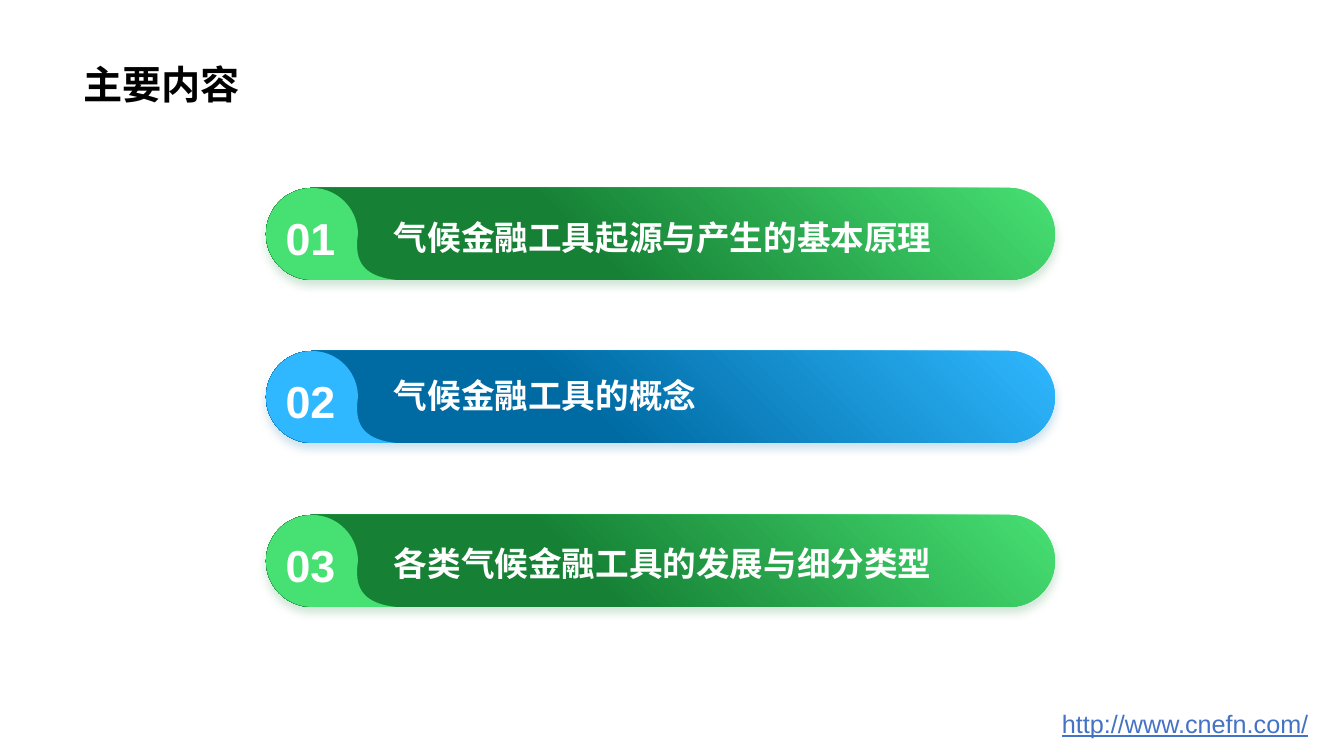
from math import cos, radians, sin

from lxml import etree
from pptx import Presentation
from pptx.dml.color import RGBColor
from pptx.enum.shapes import MSO_SHAPE as Shape
from pptx.enum.text import MSO_ANCHOR as Anchor, MSO_AUTO_SIZE as AutoSize, PP_ALIGN as Align
from pptx.oxml.ns import qn
from pptx.util import Emu, Pt

COLOURS = {
    "black": "000000", "white": "FFFFFF", "link": "4472C4",
    "light green": "47E073", "dark green": "168135",
    "light blue": "2FB7FF", "dark blue": "006BA3",
}


def px(length):
    return Emu(round(length * 914400 / 100.8))


def write(shape, text, size, colour, bold=True, align=Align.LEFT, wrap=True):
    frame = shape.text_frame
    frame.text = text
    frame.word_wrap = wrap
    frame.auto_size = AutoSize.NONE
    paragraph = frame.paragraphs[0]
    paragraph.alignment = align
    font = paragraph.runs[0].font
    font.name, font.size, font.bold = "Arial", Pt(size), bold
    font.color.rgb = RGBColor.from_string(COLOURS[colour])
    return paragraph


presentation = Presentation()
presentation.slide_width, presentation.slide_height = px(1344), px(756)
slide = presentation.slides.add_slide(presentation.slide_layouts[5])
shapes = slide.shapes

# Title
title = shapes.title
title.left, title.top, title.width, title.height = px(73), px(0), px(1198), px(113)
write(title, "主要内容", 28, "black").line_spacing = 0.9
title.text_frame.vertical_anchor = Anchor.BOTTOM

# Web address
address = shapes.add_textbox(px(1052), px(703), px(276), px(40))
write(address, "http://www.cnefn.com/", 18, "link", bold=False).runs[0].font.underline = True

# Tab outline around the centre of a bar's round end: three quarter circles, then a flared foot
RADIUS = 46
tab_outline = [(RADIUS * cos(radians(angle)), RADIUS * sin(radians(angle)))
               for angle in range(90, 361, 5)]
foot = [(46, 0), (43, 22), (46, 42), (84, 46)]
for step in range(1, 21):
    t = step / 20
    weights = [(1 - t) ** 3, 3 * t * (1 - t) ** 2, 3 * t * t * (1 - t), t ** 3]
    tab_outline.append(tuple(sum(weight * point[axis] for weight, point in zip(weights, foot))
                             for axis in (0, 1)))

# Agenda bars: heading, hue, offset of the heading inside the bar
agenda = [
    ("气候金融工具起源与产生的基本原理", "green", 24),
    ("气候金融工具的概念", "blue", 19),
    ("各类气候金融工具的发展与细分类型", "green", 23),
]
BAR_LEFT, BAR_TOP, BAR_WIDTH = 266, 188, 789
for row, (heading, hue, heading_offset) in enumerate(agenda):
    top = BAR_TOP + row * 327 // 2
    light, dark = COLOURS[f"light {hue}"], COLOURS[f"dark {hue}"]

    # Gradient bar
    bar = shapes.add_shape(Shape.ROUNDED_RECTANGLE, px(BAR_LEFT), px(top),
                           px(BAR_WIDTH), px(2 * RADIUS))
    bar.adjustments[0] = 0.5
    bar.line.fill.background()
    bar.fill.gradient()
    bar.fill.gradient_angle = 225
    for stop, position, colour in zip(bar.fill.gradient_stops, (0, 0.6), (light, dark)):
        stop.position = position
        stop.color.rgb = RGBColor.from_string(colour)

    # Soft shadow below the bar
    bar.shadow.inherit = False
    effects = bar._element.spPr.find(qn("a:effectLst"))
    shadow = etree.SubElement(effects, qn("a:outerShdw"), blurRad=str(Pt(6)), dist=str(Pt(4)),
                              dir="5400000", algn="t", rotWithShape="0")
    shadow_colour = etree.SubElement(shadow, qn("a:srgbClr"), val=dark)
    etree.SubElement(shadow_colour, qn("a:alpha"), val="20000")

    # Number tab
    points = [(px(BAR_LEFT + RADIUS + x), px(top + RADIUS + y)) for x, y in tab_outline]
    builder = shapes.build_freeform(*points[0], scale=1.0)
    builder.add_line_segments(points[1:], close=True)
    tab = builder.convert_to_shape()
    tab.shadow.inherit = False
    tab.fill.solid()
    tab.fill.fore_color.rgb = RGBColor.from_string(light)
    tab.line.fill.background()

    # Heading and number
    label = shapes.add_textbox(px(384), px(top + heading_offset), px(582), px(50))
    write(label, heading, 24, "white")
    number = shapes.add_textbox(px(275), px(top + 18), px(71), px(65))
    write(number, f"{row + 1:02}", 32, "white", align=Align.CENTER, wrap=False)

presentation.save("out.pptx")
